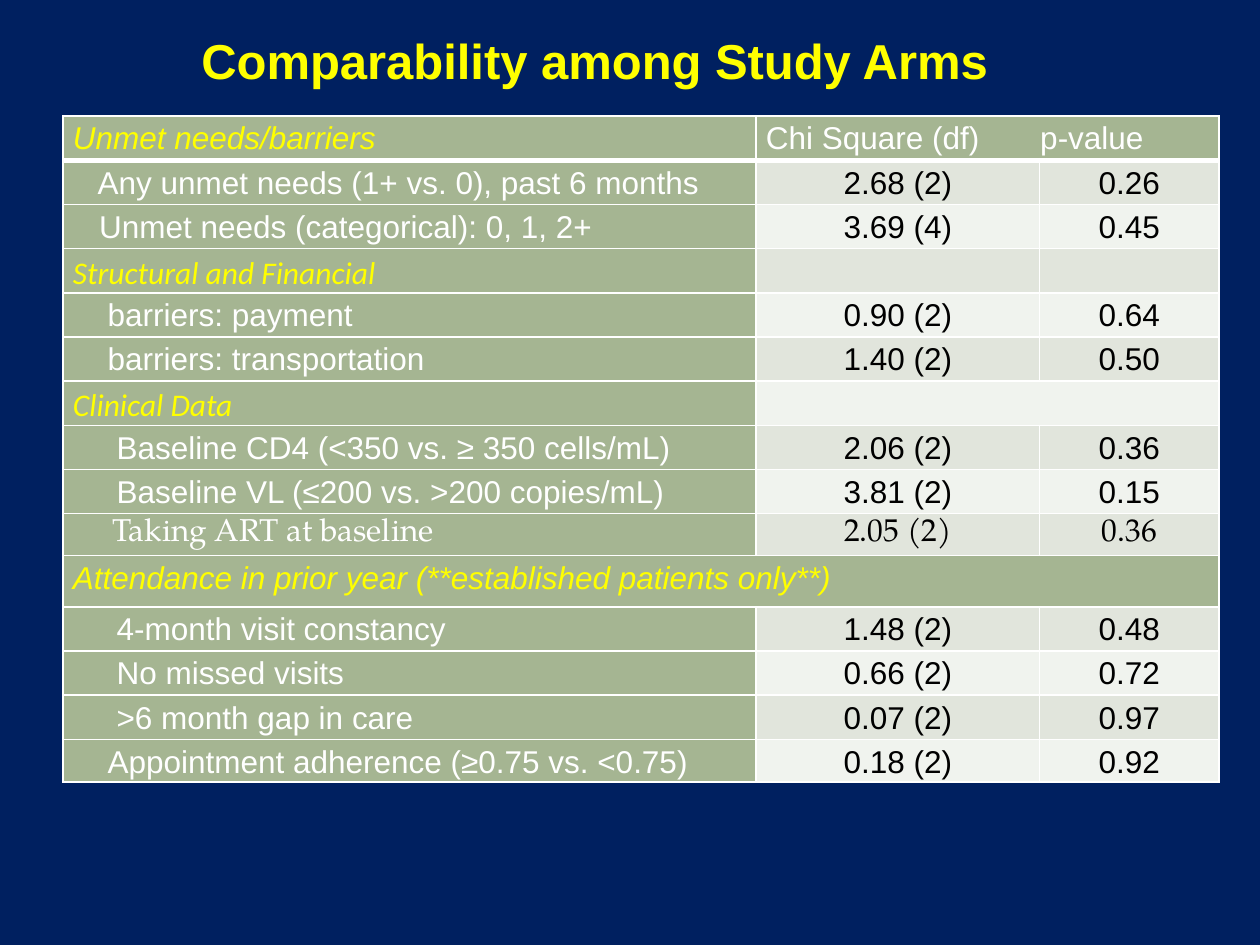
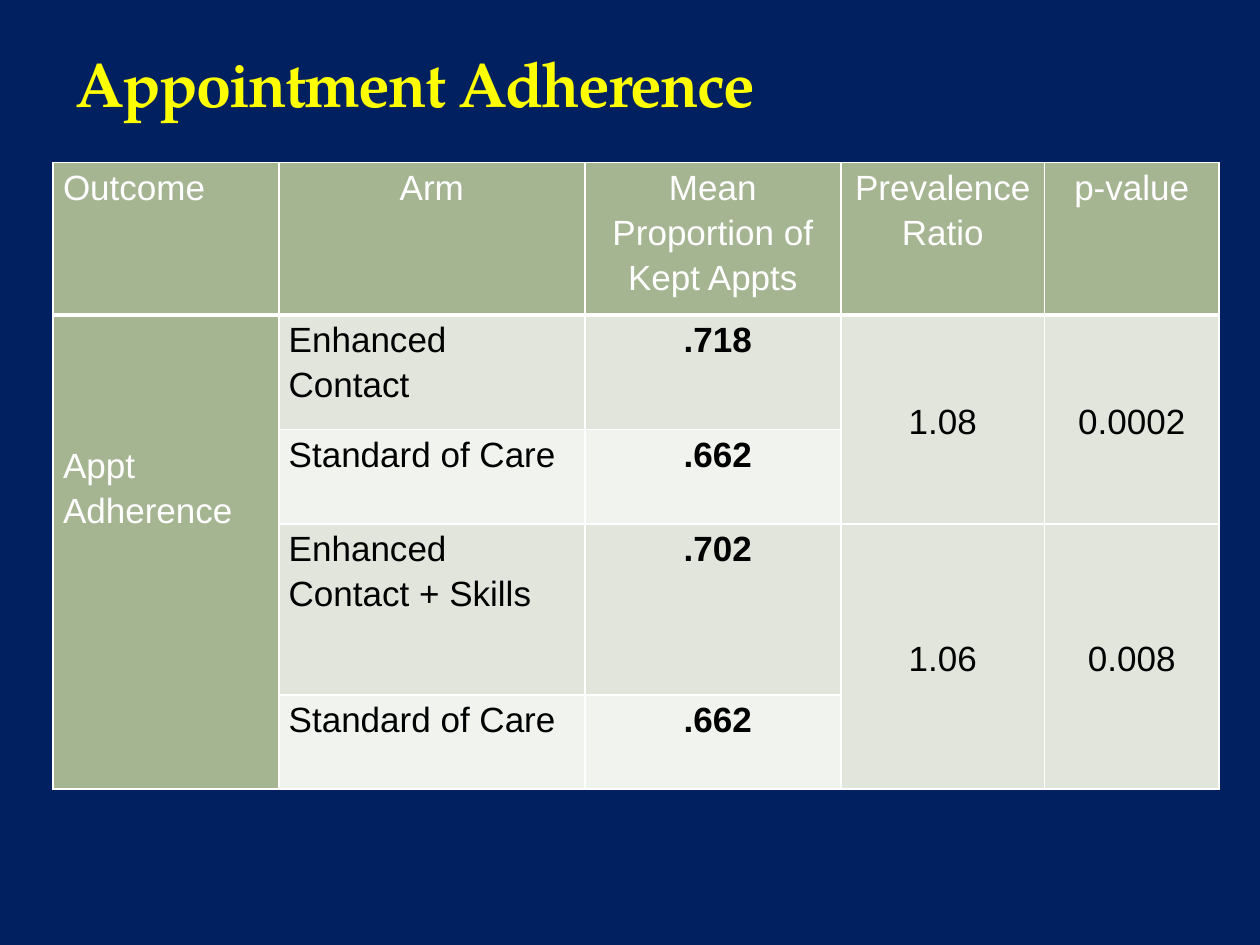
from pptx import Presentation
from pptx import util as u
from pptx.dml.color import RGBColor
from pptx.enum import text
from pptx.oxml import xmlchemy
from lxml import etree
from pptx.oxml.ns import qn

NAVY, YELLOW, WHITE, BLACK = "002060", "FFFF00", "FFFFFF", "000000"
SAGE, BANDS = "A5B592", ("E1E5DC", "F0F3EE")
SANS, SERIF, HEADING = "Arial", "TeX Gyre Pagella", "Calibri"
CENTER = text.PP_ALIGN.CENTER
MIDDLE = text.MSO_ANCHOR.MIDDLE
INSET = 0.2


def color(value):
    return RGBColor.from_string(value)


def add_run(paragraph, words, size, font=SANS, fill=WHITE, bold=False, italic=False):
    run = paragraph.add_run()
    run.text = words
    run.font.size = u.Pt(size)
    run.font.name = font
    run.font.bold = bold
    run.font.italic = italic
    run.font.color.rgb = color(fill)
    return run


def add_slide(presentation):
    slide = presentation.slides.add_slide(presentation.slide_layouts[6])
    slide.background.fill.solid()
    slide.background.fill.fore_color.rgb = color(NAVY)
    return slide


def add_title(slide, box, words, size, font, anchor, spacing=0):
    shape = slide.shapes.add_textbox(*(u.Cm(length) for length in box))
    frame = shape.text_frame
    frame.word_wrap = True
    frame.vertical_anchor = anchor
    run = add_run(frame.paragraphs[0], words, size, font, YELLOW, bold=True)
    if spacing:
        run.font._element.set("spc", str(spacing * 100))


def paint_cell(cell, fill, bottom=1):
    """Give a cell its white borders, fill and insets."""
    properties = cell._tc.get_or_add_tcPr()
    for side, width in (("L", 1), ("R", 1), ("T", 1), ("B", bottom)):
        line = etree.SubElement(properties, qn(f"a:ln{side}"), w=str(u.Pt(width)))
        solid = etree.SubElement(line, qn("a:solidFill"))
        etree.SubElement(solid, qn("a:srgbClr"), val=WHITE)
    cell.fill.solid()
    cell.fill.fore_color.rgb = color(fill)
    cell.margin_left = cell.margin_right = u.Cm(INSET)
    cell.margin_top = cell.margin_bottom = 0


def add_table(slide, left, top, widths, heights):
    """Banded grid with a sage header row and first column."""
    frame = slide.shapes.add_table(
        len(heights), len(widths), u.Cm(left), u.Cm(top),
        u.Cm(sum(widths)), u.Cm(sum(heights)))
    table = frame.table
    table.horz_banding = False
    for column, width in zip(table.columns, widths):
        column.width = u.Cm(width)
    for index, (row, height) in enumerate(zip(table.rows, heights)):
        row.height = u.Cm(height)
        for position, cell in enumerate(row.cells):
            is_header = index == 0 or position == 0
            paint_cell(cell, SAGE if is_header else BANDS[(index - 1) % 2],
                       bottom=3 if index == 0 else 1)
    return table


def write_cell(cell, words, size, align=None, indent=0, tab=None, **style):
    paragraph = cell.text_frame.paragraphs[0]
    paragraph.line_spacing = 1.15
    paragraph.alignment = align
    properties = paragraph._p.get_or_add_pPr()
    if indent:
        properties.set("marL", str(u.Cm(indent)))
        properties.set("indent", "0")
    if tab:
        stops = etree.SubElement(properties, qn("a:tabLst"))
        etree.SubElement(stops, qn("a:tab"), pos=str(u.Cm(tab)), algn="l")
    add_run(paragraph, words, size, **style)


# Each row: label, indent, chi square, p-value; section rows have no values
COMPARISONS = [
    ("Unmet needs/barriers", 0, None, None),
    ("Any unmet needs (1+ vs. 0), past 6 months", 0.5, "2.68 (2)", "0.26"),
    ("Unmet needs (categorical): 0, 1, 2+", 0.53, "3.69 (4)", "0.45"),
    ("Structural and Financial", 0, None, None),
    ("barriers: payment", 0.7, "0.90 (2)", "0.64"),
    ("barriers: transportation", 0.7, "1.40 (2)", "0.50"),
    ("Clinical Data", 0, None, None),
    ("Baseline CD4 (<350 vs. ≥ 350 cells/mL)", 0.88, "2.06 (2)", "0.36"),
    ("Baseline VL (≤200 vs. >200 copies/mL)", 0.88, "3.81 (2)", "0.15"),
    ("Taking ART at baseline", 0.79, "2.05 (2)", "0.36"),
    ("Attendance in prior year (**established patients only**)", 0, None, None),
    ("4-month visit constancy", 0.88, "1.48 (2)", "0.48"),
    ("No missed visits", 0.88, "0.66 (2)", "0.72"),
    (">6 month gap in care", 0.88, "0.07 (2)", "0.97"),
    ("Appointment adherence (≥0.75 vs. <0.75)", 0.7, "0.18 (2)", "0.92"),
]
ROW_FONTS = {3: HEADING, 6: HEADING, 9: SERIF}


def build_comparability(presentation):
    slide = add_slide(presentation)
    heights = [0.89] * 9 + [0.84, 1.04] + [0.89] * 3 + [0.86]
    table = add_table(slide, 1.27, 2.34, (13.97, 5.72, 3.61), heights)

    # Merged header and section cells
    for row, first in ((0, 1), (6, 1), (10, 0)):
        table.cell(row, first).merge(table.cell(row, 2))
    write_cell(table.cell(0, 1), "Chi Square (df)\tp-value", 18, tab=5.53)

    # Labels and test results
    for row, (label, indent, *results) in enumerate(COMPARISONS):
        font = ROW_FONTS.get(row, SANS)
        is_section = results[0] is None
        write_cell(table.cell(row, 0), label, 18, indent=indent, font=font,
                   fill=YELLOW if is_section else WHITE, italic=is_section)
        if not is_section:
            for column, result in enumerate(results, 1):
                write_cell(table.cell(row, column), result, 18, CENTER,
                           font=font, fill=BLACK)

    add_title(slide, (3.81, 0.49, 16.56, 1.5), "Comparability among Study Arms",
              28, SANS, text.MSO_ANCHOR.TOP)


OUTCOME_HEADINGS = ("Outcome", "Arm", "Mean Proportion of Kept Appts",
                    "Prevalence Ratio", "p-value")
ARMS = [("Enhanced Contact", ".718"), ("Standard of Care", ".662"),
        ("Enhanced Contact + Skills", ".702"), ("Standard of Care", ".662")]
RATIOS = [("1.08", "0.0002"), ("1.06", "0.008")]


def build_adherence(presentation):
    slide = add_slide(presentation)
    table = add_table(slide, 1.07, 3.28, (4.55, 6.17, 5.16, 4.11, 3.51),
                      (3.07, 2.31, 1.9, 3.45, 1.9))

    # Headings
    for column, heading in enumerate(OUTCOME_HEADINGS):
        write_cell(table.cell(0, column), heading, 20, CENTER if column else None)

    # Outcome label spanning all arms
    outcome = table.cell(1, 0)
    outcome.merge(table.cell(4, 0))
    outcome.margin_top = u.Cm(2.54)
    write_cell(outcome, "Appt Adherence", 20)

    # Arms and their mean proportions
    for row, (arm, proportion) in enumerate(ARMS, 1):
        write_cell(table.cell(row, 1), arm, 20, fill=BLACK)
        cell = table.cell(row, 2)
        cell.margin_left = u.Cm(2 * INSET)
        write_cell(cell, proportion, 20, CENTER, fill=BLACK, bold=True)

    # Ratio and p-value, one for each pair of arms
    for pair, values in enumerate(RATIOS):
        row = 1 + 2 * pair
        for column, value in enumerate(values, 3):
            cell = table.cell(row, column)
            cell.merge(table.cell(row + 1, column))
            cell.vertical_anchor = MIDDLE
            write_cell(cell, value, 20, CENTER, fill=BLACK)

    add_title(slide, (1.27, 0, 22.86, 2.54), "Appointment Adherence",
              36, SERIF, text.MSO_ANCHOR.BOTTOM, spacing=-1)


def main():
    presentation = Presentation()
    presentation.slide_width = u.Cm(25.4)
    presentation.slide_height = u.Cm(19.05)
    build_comparability(presentation)
    build_adherence(presentation)
    presentation.save("out.pptx")


if __name__ == "__main__":
    main()
